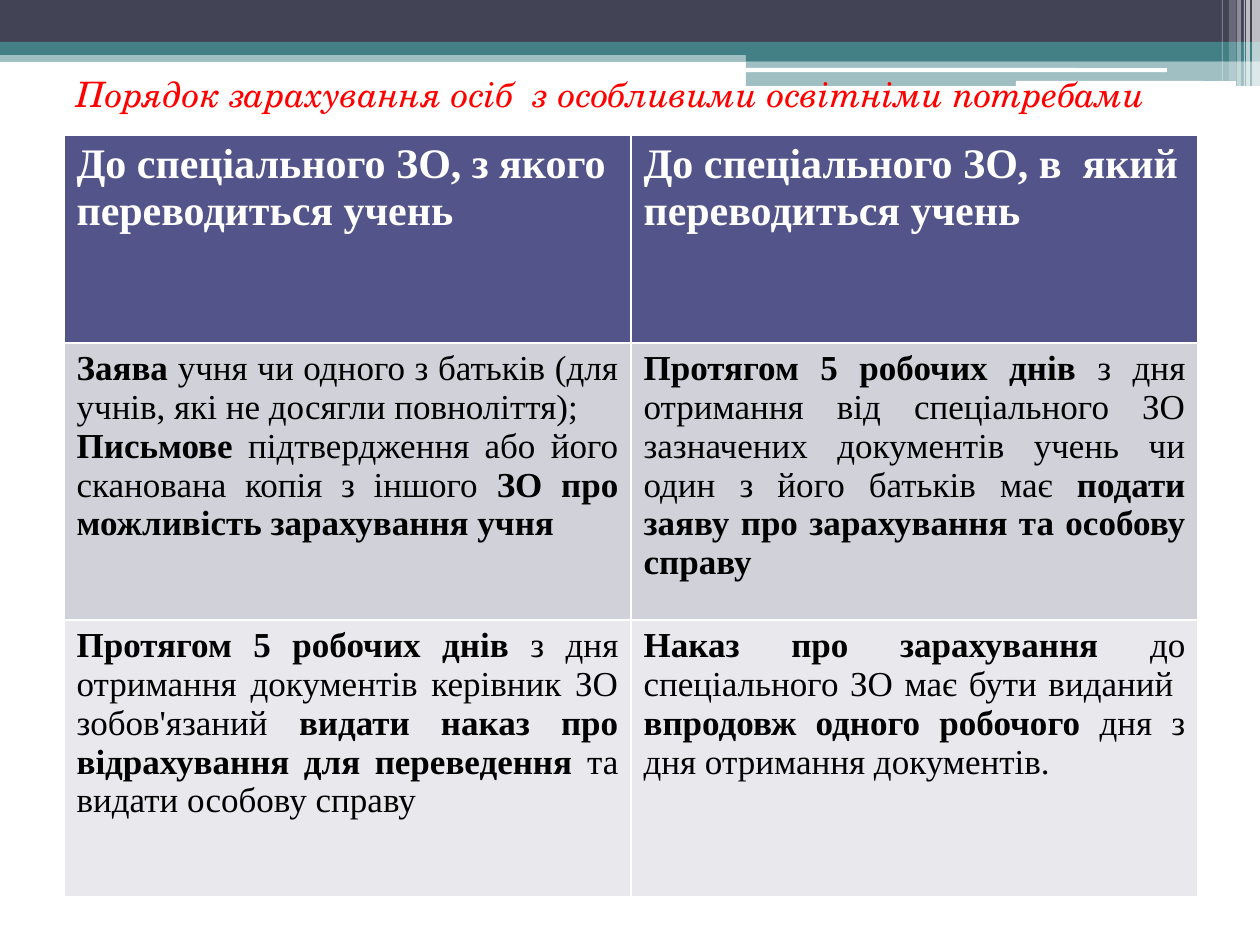
"""Build the slide on enrolling students with special educational needs."""
from dataclasses import dataclass

from lxml import etree
from pptx import Presentation
from pptx.dml.color import RGBColor
from pptx.enum.shapes import MSO_SHAPE
from pptx.enum.text import MSO_ANCHOR, MSO_AUTO_SIZE, PP_ALIGN
from pptx.oxml.ns import qn
from pptx.util import Emu, Pt

RECT = MSO_SHAPE.RECTANGLE
ROUNDED = MSO_SHAPE.ROUNDED_RECTANGLE
TOP = MSO_ANCHOR.TOP
GROW = MSO_AUTO_SIZE.SHAPE_TO_FIT_TEXT
LEFT = PP_ALIGN.LEFT
JUSTIFY = PP_ALIGN.JUSTIFY
EMU_PER_PX = 914400 / 126


@dataclass(frozen=True)
class Theme:
    slate: str = "424456"
    teal: str = "438086"
    white: str = "FFFFFF"
    black: str = "000000"
    red: str = "FF0000"
    header: str = "53548A"
    row_fills: tuple = ("D1D1DA", "E9E9ED")
    title_font: str = "TeX Gyre Schola"
    table_font: str = "Times New Roman"
    header_size: int = 24
    text_size: int = 20


def px(*lengths):
    return [Emu(round(length * EMU_PER_PX)) for length in lengths]


def add_run(paragraph, text, color, **formats):
    run = paragraph.add_run()
    run.text = text
    for name, value in formats.items():
        setattr(run.font, name, value)
    run.font.color.rgb = RGBColor.from_string(color)


theme = Theme()
presentation = Presentation()
presentation.slide_width, presentation.slide_height = px(1260, 945)
slide = presentation.slides.add_slide(presentation.slide_layouts[5])

bands = [
    (RECT, (0, 50, 1260, 12), theme.teal, 50),
    (RECT, (0, 0, 1260, 42), theme.slate, 100),
    (RECT, (0, 42, 1260, 13), theme.teal, 100),
    (RECT, (746, 49, 514, 12), theme.teal, 100),
    (RECT, (746, 61, 514, 25), theme.teal, 50),
    (ROUNDED, (745, 68, 422, 4), theme.white, 100),
    (ROUNDED, (1016, 81, 220, 5), theme.white, 100),
]
stripes = [
    (1252, 8, 86, 65),
    (1246, 4, 86, 65),
    (1244, 1, 86, 60),
    (1237, 4, 86, 40),
    (1229, 7, 81, 20),
    (1222, 1, 81, 30),
]
bands += [
    (RECT, (left, 0, width, height), theme.white, opacity)
    for left, width, height, opacity in stripes
]
for outline, box, color, opacity in bands:
    band = slide.shapes.add_shape(outline, *px(*box))
    band.shadow.inherit = False
    band.fill.solid()
    band.fill.fore_color.rgb = RGBColor.from_string(color)
    band.line.fill.background()
    if opacity < 100:
        band_color = band.element.spPr.find(".//" + qn("a:srgbClr"))
        etree.SubElement(band_color, qn("a:alpha"), val=str(opacity * 1000))

heading = slide.shapes.title
heading.left, heading.top, heading.width, heading.height = px(64, 66, 1111, 55)
heading.element.getparent().append(heading.element)
heading_frame = heading.text_frame
frame_formats = {"word_wrap": True, "auto_size": GROW, "vertical_anchor": TOP}
for name, value in frame_formats.items():
    setattr(heading_frame, name, value)
heading_frame.paragraphs[0].alignment = LEFT
add_run(
    heading_frame.paragraphs[0],
    "Порядок зарахування осіб  з особливими освітніми потребами",
    theme.red,
    name=theme.title_font,
    size=Pt(theme.text_size),
    italic=True,
)

headers = [
    "До спеціального ЗО, з якого переводиться учень",
    "До спеціального ЗО, в  який переводиться учень",
]
steps = [
    [
        [
            ["Заява ", "учня чи одного з батьків (для учнів, які не досягли повноліття);"],
            [
                "Письмове",
                " підтвердження або його сканована копія з іншого ",
                "ЗО про можливість зарахування учня",
            ],
        ],
        [
            [
                "Протягом 5 робочих днів ",
                "з дня отримання від спеціального ЗО зазначених документів "
                "учень чи один з його батьків має ",
                "подати заяву про зарахування та особову справу ",
            ],
        ],
    ],
    [
        [
            [
                "Протягом 5 робочих днів ",
                "з дня отримання документів керівник ЗО зобов'язаний ",
                "видати наказ про відрахування для переведення ",
                "та видати особову справу",
            ],
        ],
        [
            [
                "Наказ про зарахування ",
                "до спеціального ЗО має бути виданий  ",
                "впродовж одного робочого ",
                "дня з дня отримання документів.",
            ],
        ],
    ],
]
procedure = slide.shapes.add_table(3, 2, *px(64, 135, 1134, 762)).table
for column in procedure.columns:
    column.width = px(567)[0]
for row, height in zip(procedure.rows, px(208, 277, 277)):
    row.height = height

rows = [[[[header]] for header in headers]] + steps
fills = (theme.header, *theme.row_fills)
for row_index, (row, fill) in enumerate(zip(rows, fills)):
    is_header = row_index == 0
    size = theme.header_size if is_header else theme.text_size
    for column_index, paragraphs in enumerate(row):
        cell = procedure.cell(row_index, column_index)
        cell.fill.solid()
        cell.fill.fore_color.rgb = RGBColor.from_string(fill)
        for index, phrases in enumerate(paragraphs):
            frame = cell.text_frame
            paragraph = frame.add_paragraph() if index else frame.paragraphs[0]
            paragraph.alignment = LEFT if is_header else JUSTIFY
            for phrase_index, phrase in enumerate(phrases):
                add_run(
                    paragraph,
                    phrase,
                    theme.white if is_header else theme.black,
                    name=theme.table_font,
                    size=Pt(size),
                    bold=phrase_index % 2 == 0,
                )

presentation.save("out.pptx")
